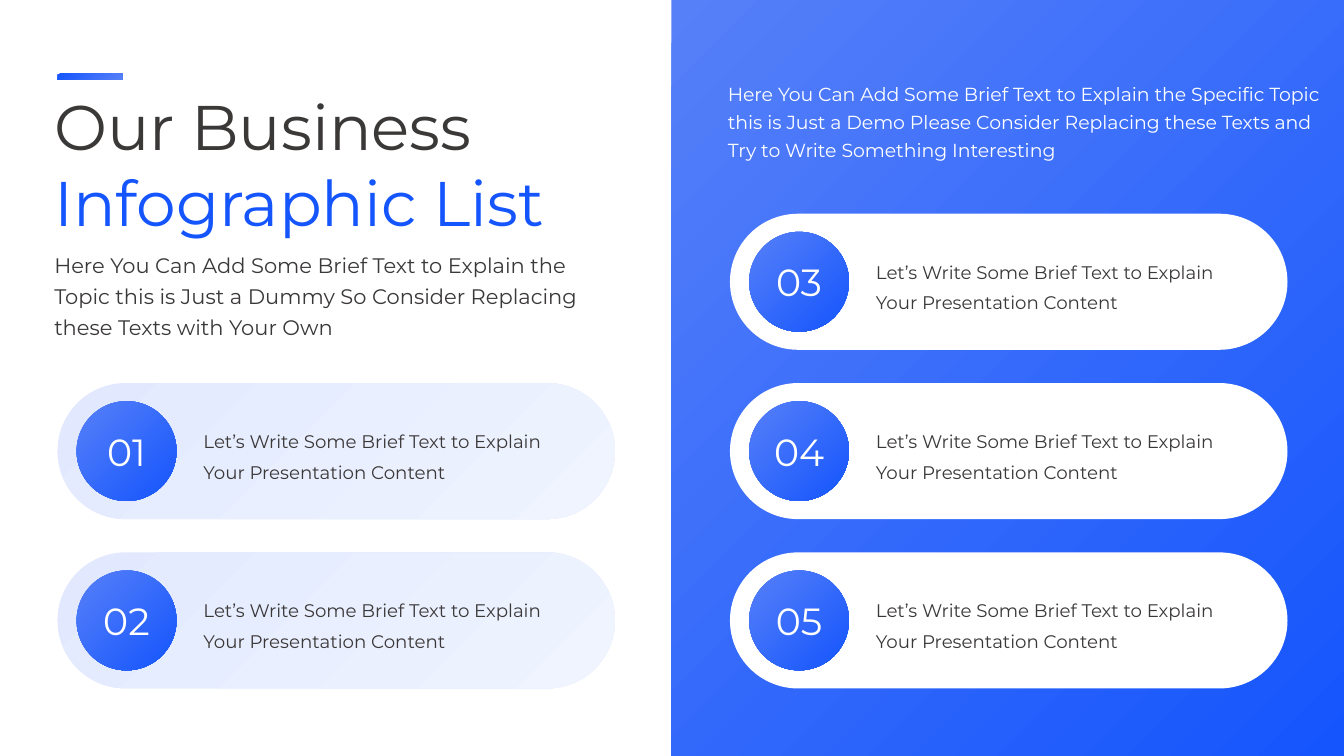
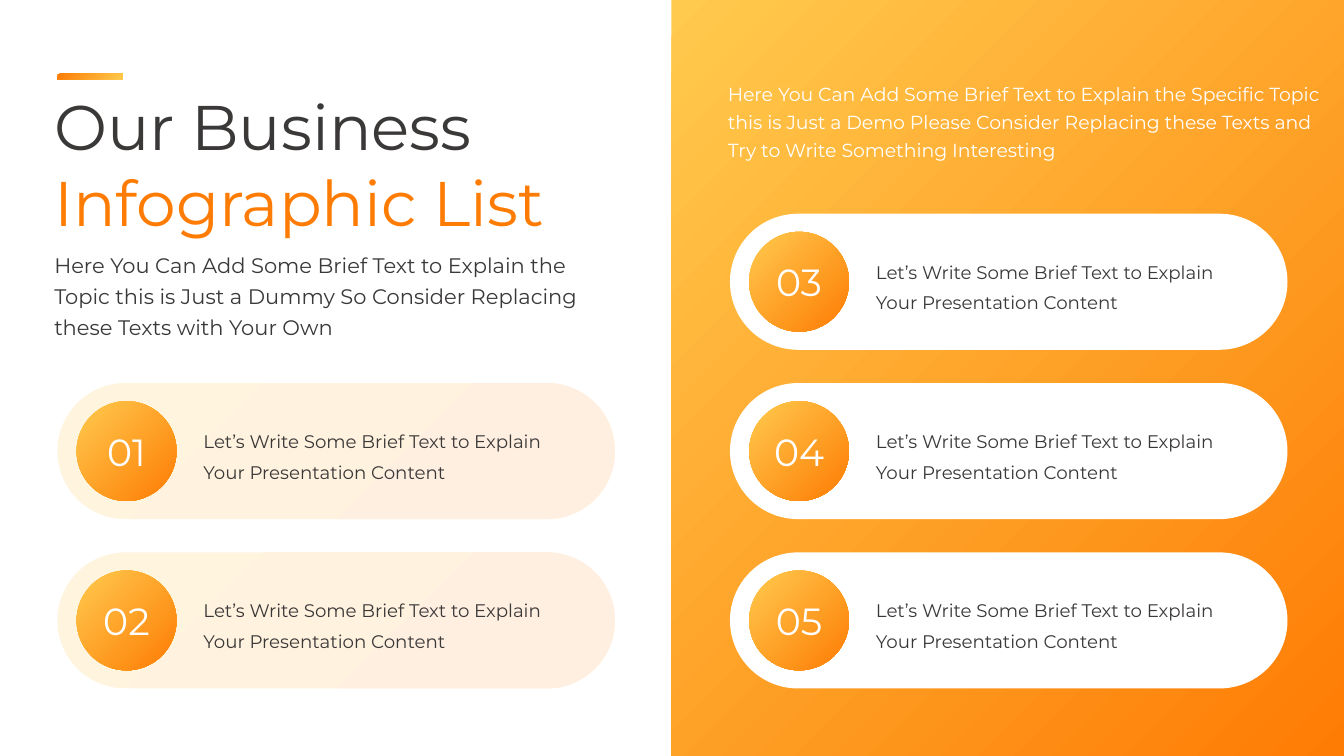
from pptx import Presentation
from pptx.dml.color import RGBColor
from pptx.enum import shapes, text
from pptx.util import Inches, Pt

# Shared colours and type
FONT = "Montserrat"
WHITE = RGBColor(0xFF, 0xFF, 0xFF)
INK = RGBColor(0x3B, 0x38, 0x38)
BLUE = RGBColor(0x15, 0x55, 0xFD)
SKY = RGBColor(0x56, 0x80, 0xF8)
ICE = RGBColor(0xE2, 0xE9, 0xFE)
MIST = RGBColor(0xEF, 0xF4, 0xFF)
ORANGE = RGBColor(0xFE, 0x7C, 0x04)
GOLD = RGBColor(0xFF, 0xCA, 0x4E)
CREAM = RGBColor(0xFF, 0xF4, 0xDD)
PEACH = RGBColor(0xFF, 0xEF, 0xE1)

# One theme per slide: dark, light, pill start, pill end, pill end stop
THEMES = [
    (BLUE, SKY, ICE, MIST, 1.0),
    (ORANGE, GOLD, CREAM, PEACH, 0.9),
]

# Shared wording
TITLE = "Our Business\nInfographic List"
LEAD = ("Here You Can Add Some Brief Text to Explain the\n"
        "Topic this is Just a Dummy So Consider Replacing\n"
        "these Texts with Your Own")
NOTE = ("Here You Can Add Some Brief Text to Explain the Specific Topic "
        "this is Just a Demo Please Consider Replacing these Texts and "
        "Try to Write Something Interesting")
ITEM = "Let’s Write Some Brief Text to Explain\nYour Presentation Content"

# Pill grid: number, left edge, row
LEFT, RIGHT = 0.57, 7.24
TOP, STEP = 2.12, 1.68
PILLS = [("01", LEFT, 1), ("02", LEFT, 2),
         ("03", RIGHT, 0), ("04", RIGHT, 1), ("05", RIGHT, 2)]


def draw(slide, kind, box, first, last=None, end=1.0):
    """Add a plain shape, solid or with a diagonal gradient."""
    shape = slide.shapes.add_shape(kind, *[Inches(v) for v in box])
    shape.shadow.inherit = False
    shape.line.fill.background()
    if last is None:
        shape.fill.solid()
        shape.fill.fore_color.rgb = first
    else:
        shape.fill.gradient()
        shape.fill.gradient_angle = 315
        for stop, color, place in zip(shape.fill.gradient_stops,
                                      (first, last), (0.0, end)):
            stop.color.rgb = color
            stop.position = place
    return shape


def write(slide, words, box, size, color, space=None):
    """Add a left-aligned text box and return its text frame."""
    frame = slide.shapes.add_textbox(*[Inches(v) for v in box]).text_frame
    frame.word_wrap = True
    frame.text = words
    for para in frame.paragraphs:
        if space:
            para.line_spacing = Pt(space)
        para.font.name = FONT
        para.font.size = Pt(size)
        para.font.color.rgb = color
    return frame


deck = Presentation()
deck.slide_width = Inches(13.33)
deck.slide_height = Inches(7.5)

for dark, light, start, finish, end in THEMES:
    slide = deck.slides.add_slide(deck.slide_layouts[6])

    # Right panel and accent bar
    rect = shapes.MSO_SHAPE.RECTANGLE
    draw(slide, rect, (6.66, 0, 6.67, 7.5), light, dark)
    draw(slide, rect, (LEFT, 0.73, 0.65, 0.06), dark, light)

    # Title and introductions
    title = write(slide, TITLE, (0.44, 0.82, 5.5, 1.62), 45, INK)
    title.paragraphs[1].font.color.rgb = dark
    write(slide, LEAD, (0.44, 2.4, 5.5, 1), 15, INK, 22)
    write(slide, NOTE, (7.12, 0.72, 6.12, 0.92), 13.5, WHITE, 20)

    # Numbered pills
    for num, x, row in PILLS:
        y = TOP + row * STEP
        colors = (start, finish, end) if x == LEFT else (WHITE,)
        pill = draw(slide, shapes.MSO_SHAPE.ROUNDED_RECTANGLE,
                    (x, y, 5.53, 1.35), *colors)
        pill.adjustments[0] = 0.5
        write(slide, ITEM, (x + 1.35, y + 0.33, 3.64, 0.69), 13, INK, 22)

        disc = draw(slide, shapes.MSO_SHAPE.OVAL,
                    (x + 0.19, y + 0.18, 0.99, 0.99), light, dark)
        frame = disc.text_frame
        frame.margin_left = frame.margin_right = 0
        frame.margin_top = frame.margin_bottom = 0
        frame.vertical_anchor = text.MSO_ANCHOR.MIDDLE
        frame.word_wrap = False
        frame.text = num
        para = frame.paragraphs[0]
        para.alignment = text.PP_ALIGN.CENTER
        para.font.name = FONT
        para.font.size = Pt(27)
        para.font.color.rgb = WHITE

deck.save("out.pptx")
